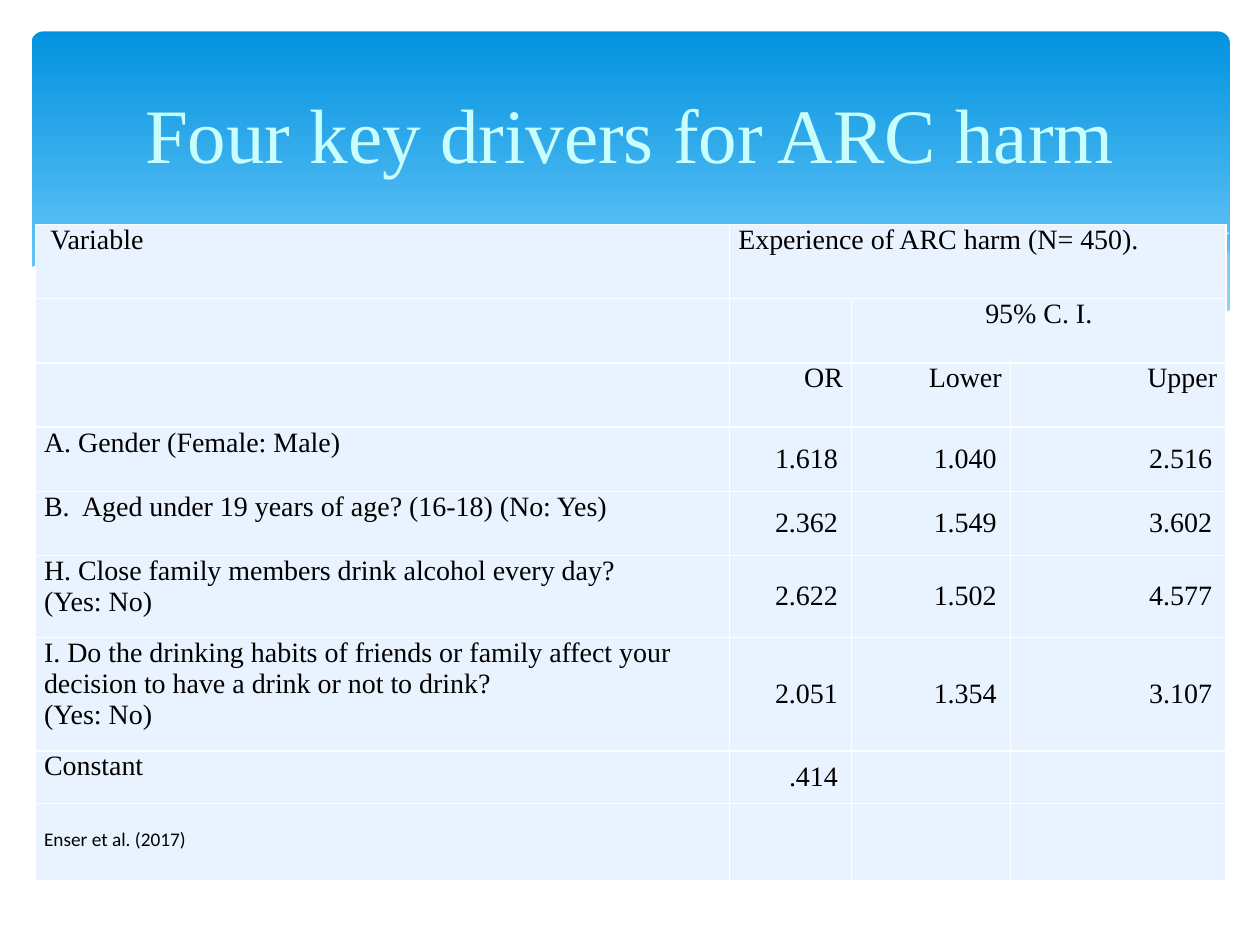
from lxml.etree import SubElement
from pptx import Presentation
from pptx.dml.color import RGBColor
from pptx.enum.shapes import MSO_SHAPE
from pptx.enum.text import MSO_ANCHOR, PP_ALIGN
from pptx.oxml.ns import qn
from pptx.util import Inches, Pt

SERIF = "Times New Roman"
WHITE, WAVE, CELL = "FFFFFF", "C6E7FC", "E8F3FF"
COLS = [5.51, 0.97, 1.26, 1.71]
ROWS = [0.59, 0.51, 0.51, 0.51, 0.51, 0.65, 0.9, 0.42, 0.61]
DRIVERS = [
    ("A. Gender (Female: Male)", "1.618", "1.040", "2.516"),
    ("B.  Aged under 19 years of age? (16-18) (No: Yes)", "2.362", "1.549", "3.602"),
    ("H. Close family members drink alcohol every day?\n(Yes: No)", "2.622", "1.502", "4.577"),
    ("I. Do the drinking habits of friends or family affect your decision "
     "to have a drink or not to drink?\n(Yes: No)", "2.051", "1.354", "3.107"),
    ("Constant", ".414", "", ""),
]
BACK_WAVE = [(9.76, 2), (9.35, 2.07), (8.61, 2.23), (7.79, 2.42), (7.06, 2.57), (6.61, 2.65),
             (7.05, 2.71), (7.57, 2.76), (8.14, 2.78), (8.72, 2.74), (9.21, 2.65), (9.76, 2.47)]
MIDDLE_WAVE = [(8.93, 2.73), (8.37, 2.65), (7.41, 2.47), (6.29, 2.22), (5.55, 2.05), (4.89, 1.94),
               (4.2, 1.87), (3.61, 1.85), (2.86, 1.91), (3.62, 2.03), (4.49, 2.22), (5.3, 2.4),
               (6.18, 2.58), (6.95, 2.7), (7.61, 2.77), (8.28, 2.78)]
FALLING_LINE = [(3.09, 1.95), (3.53, 1.89), (4.16, 1.87), (4.89, 1.9), (5.56, 1.97), (6.36, 2.08),
                (7.27, 2.26), (8.31, 2.51), (9.07, 2.72)]
RISING_LINE = [(6.13, 2.57), (6.95, 2.35), (7.76, 2.16), (8.66, 1.99), (9.24, 1.9), (9.75, 1.85)]
FRONT_WAVE = [(9.77, 2.46), (9.4, 2.59), (8.99, 2.69), (8.5, 2.75), (7.93, 2.76), (7.26, 2.72),
              (6.48, 2.62), (5.55, 2.45), (4.47, 2.2), (3.65, 2.02), (2.92, 1.9), (2.3, 1.85),
              (1.77, 1.84), (1.19, 1.87), (0.76, 1.95), (0.46, 2.03), (0.23, 2.13),
              (0.23, 3.29), (9.77, 3.29)]


def rgb(color):
    """Turn a hex string into a colour."""
    return RGBColor.from_string(color)


def write(tf, text, size=16, font=SERIF, color="000000", align=PP_ALIGN.LEFT, indent=0):
    """Write one formatted paragraph for each line of text."""
    for i, line in enumerate(text.split("\n")):
        p = tf.add_paragraph() if i else tf.paragraphs[0]
        p.alignment = align
        if indent:
            for side in ("marL", "marR"):
                p._p.get_or_add_pPr().set(side, str(Inches(indent)))
        r = p.add_run()
        r.text = line
        r.font.size, r.font.name = Pt(size), font
        r.font.color.rgb = rgb(color)


def add_band(s):
    """Add the rounded gradient band behind the title."""
    sp = s.shapes.add_shape(MSO_SHAPE.ROUNDED_RECTANGLE, Inches(0.25), Inches(0.25),
                            Inches(9.51), Inches(2.7))
    sp.adjustments[0] = 0.034
    sp.shadow.inherit = False
    sp.line.fill.background()
    sp.fill.gradient()
    sp.fill.gradient_angle = 270
    for stop, position, color in zip(sp.fill.gradient_stops, (0, 0.9), ("0293E0", "83D3FE")):
        stop.position = position
        stop.color.rgb = rgb(color)


def add_wave(s, points, fill=None, alpha=100):
    """Add a filled wave, or an open white hairline when there is no fill."""
    start, *rest = [(Inches(x), Inches(y)) for x, y in points]
    builder = s.shapes.build_freeform(*start)
    builder.add_line_segments(rest, close=fill is not None)
    sp = builder.convert_to_shape()
    sp.shadow.inherit = False
    if fill is None:
        sp.fill.background()
        sp.line.color.rgb = rgb(WHITE)
        sp.line.width = Pt(0)
        return
    sp.line.fill.background()
    sp.fill.solid()
    sp.fill.fore_color.rgb = rgb(fill)
    clr = sp._element.spPr.find(qn("a:solidFill"))[0]
    SubElement(clr, qn("a:alpha"), val=str(alpha * 1000))


def style_cell(cell):
    """Give a cell its margins, white borders and pale fill."""
    cell.margin_left = cell.margin_right = Inches(0.07)
    cell.margin_top = cell.margin_bottom = 0
    tcPr = cell._tc.get_or_add_tcPr()
    for side in ("lnL", "lnR", "lnT", "lnB"):
        ln = SubElement(tcPr, qn(f"a:{side}"), w=str(Pt(1)))
        SubElement(SubElement(ln, qn("a:solidFill")), qn("a:srgbClr"), val=WHITE)
    cell.fill.solid()
    cell.fill.fore_color.rgb = rgb(CELL)


def add_drivers_table(s):
    """Add the table of odds ratios and confidence intervals."""
    table = s.shapes.add_table(len(ROWS), len(COLS), Inches(0.28), Inches(1.78),
                               Inches(sum(COLS)), Inches(sum(ROWS))).table
    table.first_row = table.horz_banding = False
    for column, width in zip(table.columns, COLS):
        column.width = Inches(width)
    for row, height in zip(table.rows, ROWS):
        row.height = Inches(height)
    for cell in table.iter_cells():
        style_cell(cell)
    table.cell(0, 1).merge(table.cell(0, 3))
    table.cell(1, 2).merge(table.cell(1, 3))

    write(table.cell(0, 0).text_frame, " Variable")
    write(table.cell(0, 1).text_frame, "Experience of ARC harm (N= 450).")
    write(table.cell(1, 2).text_frame, "95% C. I.", align=PP_ALIGN.CENTER)
    for col, name in enumerate(("OR", "Lower", "Upper"), 1):
        write(table.cell(2, col).text_frame, name, align=PP_ALIGN.RIGHT)
    for row, (driver, *values) in enumerate(DRIVERS, 3):
        write(table.cell(row, 0).text_frame, driver)
        for col, value in enumerate(values, 1):
            if value:
                cell = table.cell(row, col)
                cell.vertical_anchor = MSO_ANCHOR.MIDDLE
                write(cell.text_frame, value, align=PP_ALIGN.RIGHT, indent=0.04)
    credit = table.cell(8, 0)
    credit.margin_top = Inches(0.19)
    write(credit.text_frame, "Enser et al. (2017)", size=11, font="Calibri")


def add_title(s, text):
    """Add the slide title."""
    tf = s.shapes.add_textbox(Inches(0.5), Inches(0.37), Inches(9), Inches(1.37)).text_frame
    tf.word_wrap = True
    tf.vertical_anchor = MSO_ANCHOR.MIDDLE
    write(tf, text, size=44, color="C8FEFD", align=PP_ALIGN.CENTER)


def main():
    """Build the slide and save it."""
    prs = Presentation()
    prs.slide_width, prs.slide_height = Inches(10), Inches(7.5)
    s = prs.slides.add_slide(prs.slide_layouts[6])
    add_band(s)
    add_wave(s, BACK_WAVE, WAVE, alpha=29)
    add_wave(s, MIDDLE_WAVE, WAVE, alpha=40)
    add_wave(s, FALLING_LINE)
    add_wave(s, RISING_LINE)
    add_wave(s, FRONT_WAVE, WHITE)
    add_drivers_table(s)
    add_title(s, "Four key drivers for ARC harm")
    prs.save("out.pptx")


if __name__ == "__main__":
    main()
